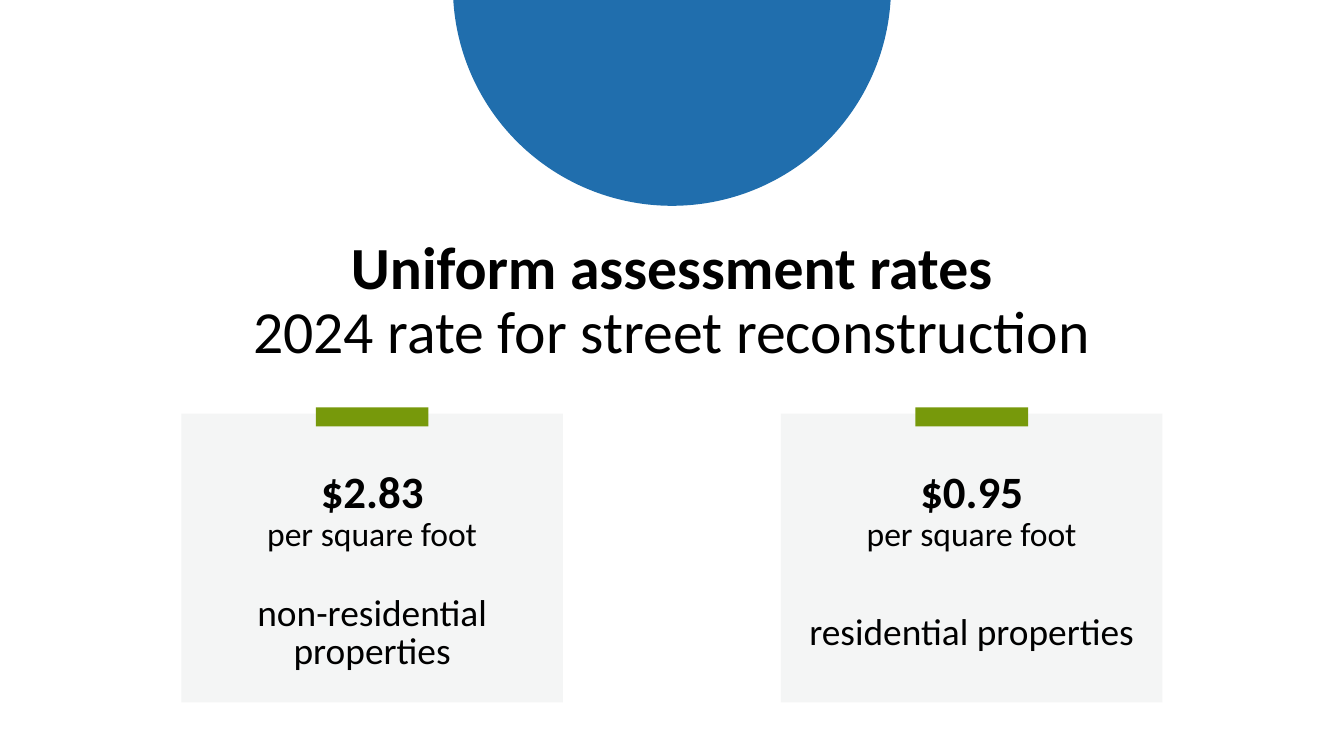
from pptx import Presentation
from pptx.dml.color import RGBColor
from pptx.enum.shapes import MSO_SHAPE
from pptx.enum.text import MSO_ANCHOR, PP_ALIGN
from pptx.util import Cm, Pt

RECTANGLE = MSO_SHAPE.RECTANGLE
OVAL = MSO_SHAPE.OVAL
MIDDLE = MSO_ANCHOR.MIDDLE
CENTER = PP_ALIGN.CENTER

BLUE = RGBColor(0x20, 0x6E, 0xAD)
GREEN = RGBColor(0x77, 0x99, 0x0B)
PALE_GRAY = RGBColor(0xF4, 0xF5, 0xF5)
BLACK = RGBColor(0, 0, 0)
FONT = "Calibri"

TITLE = [("Uniform assessment rates", 32, True)]
SUBTITLE = [("2024 rate for street reconstruction", 32, False)]
RATES = [
    ("$2.83", "per square foot", "non-residential properties"),
    ("$0.95", "per square foot", "residential properties"),
]

SLIDE_WIDTH, SLIDE_HEIGHT = 25.4, 14.29
CIRCLE_SIZE, CIRCLE_TOP = 8.28, -4.39
TITLE_WIDTH, TITLE_TOP, TITLE_HEIGHT = 22.66, 4.52, 2.39
MARGIN = 3.43
CARD_WIDTH, CARD_HEIGHT, CARD_TOP = 7.21, 5.46, 7.82
TAB_WIDTH, TAB_HEIGHT, TAB_TOP = 2.13, 0.36, 7.7
TEXT_HEIGHT, RATE_TOP, PROPERTY_TOP = 2.03, 8.66, 10.97


def add_block(slide, kind, left, top, width, height, color):
    shape = slide.shapes.add_shape(kind, Cm(left), Cm(top), Cm(width), Cm(height))
    shape.shadow.inherit = False
    shape.fill.solid()
    shape.fill.fore_color.rgb = color
    shape.line.fill.background()


def add_text(slide, left, top, width, height, lines, spacing=0.9):
    box = slide.shapes.add_textbox(Cm(left), Cm(top), Cm(width), Cm(height))
    text_frame = box.text_frame
    text_frame.word_wrap = True
    text_frame.vertical_anchor = MIDDLE
    text_frame.text = "\n".join(
        "\v".join(text for text, size, bold in line) for line in lines
    )
    for paragraph, line in zip(text_frame.paragraphs, lines):
        paragraph.alignment = CENTER
        paragraph.line_spacing = spacing
        for run, (text, size, bold) in zip(paragraph.runs, line):
            run.font.name = FONT
            run.font.size = Pt(size)
            run.font.bold = bold
            run.font.color.rgb = BLACK


def add_card(slide, left, rate, unit, property_type):
    add_block(slide, RECTANGLE, left, CARD_TOP, CARD_WIDTH, CARD_HEIGHT, PALE_GRAY)
    add_text(slide, left, RATE_TOP, CARD_WIDTH, TEXT_HEIGHT,
             [[(rate, 24, True), (unit, 18, False)]])
    tab_left = left + (CARD_WIDTH - TAB_WIDTH) / 2
    add_block(slide, RECTANGLE, tab_left, TAB_TOP, TAB_WIDTH, TAB_HEIGHT, GREEN)
    add_text(slide, left, PROPERTY_TOP, CARD_WIDTH, TEXT_HEIGHT,
             [[(property_type, 20, False)]], 0.85)


def main():
    presentation = Presentation()
    presentation.slide_width = Cm(SLIDE_WIDTH)
    presentation.slide_height = Cm(SLIDE_HEIGHT)
    slide = presentation.slides.add_slide(presentation.slide_layouts[6])

    add_block(slide, OVAL, (SLIDE_WIDTH - CIRCLE_SIZE) / 2, CIRCLE_TOP,
              CIRCLE_SIZE, CIRCLE_SIZE, BLUE)
    add_text(slide, (SLIDE_WIDTH - TITLE_WIDTH) / 2, TITLE_TOP,
             TITLE_WIDTH, TITLE_HEIGHT, [TITLE, SUBTITLE])

    card_step = (SLIDE_WIDTH - 2 * MARGIN - CARD_WIDTH) / (len(RATES) - 1)
    for index, rate in enumerate(RATES):
        add_card(slide, MARGIN + index * card_step, *rate)

    presentation.save("out.pptx")


if __name__ == "__main__":
    main()
